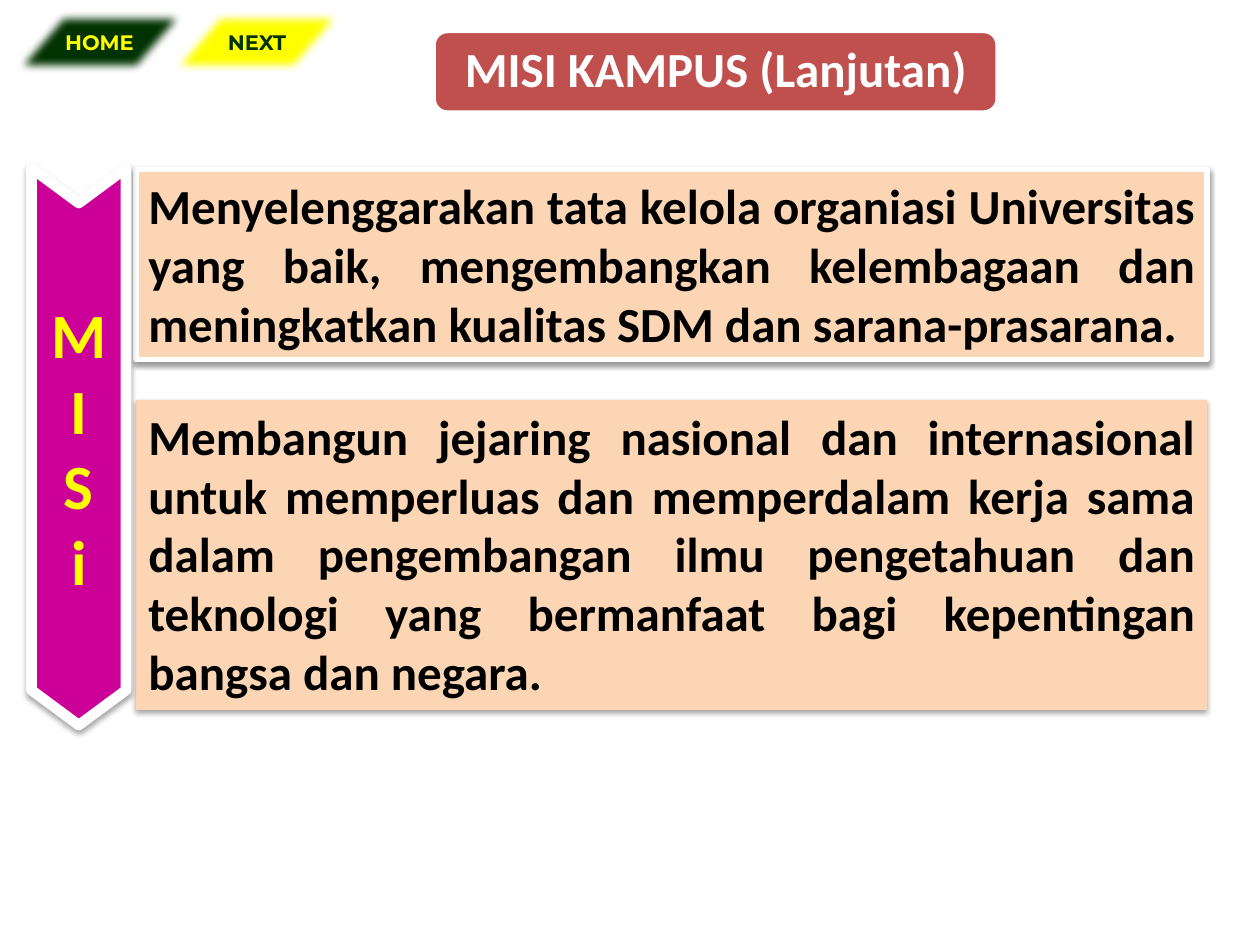
"""Build the mission slide: two buttons, a title, a vertical banner and two statements."""
from lxml import etree
from pptx import Presentation
from pptx.dml.color import RGBColor
from pptx.enum.shapes import MSO_SHAPE
from pptx.enum.text import MSO_ANCHOR, PP_ALIGN
from pptx.oxml.ns import qn
from pptx.util import Inches, Pt

PARALLELOGRAM = MSO_SHAPE.PARALLELOGRAM
RECTANGLE = MSO_SHAPE.RECTANGLE
ROUNDED = MSO_SHAPE.ROUNDED_RECTANGLE
CHEVRON = MSO_SHAPE.CHEVRON
CENTER, JUSTIFY = PP_ALIGN.CENTER, PP_ALIGN.JUSTIFY
TOP, MIDDLE = MSO_ANCHOR.TOP, MSO_ANCHOR.MIDDLE

presentation = Presentation()
presentation.slide_width, presentation.slide_height = Inches(10), Inches(7.5)
slide = presentation.slides.add_slide(presentation.slide_layouts[6])
column = presentation.slide_width / 100
row = presentation.slide_height / 75


def add_block(kind, left, top, width, height, fill, line=0, shadow=0, soft=0):
    """Add a filled shape placed in grid units, with an optional white line and effects."""
    shape = slide.shapes.add_shape(
        kind, int(left * column), int(top * row), int(width * column), int(height * row))
    shape.fill.solid()
    shape.fill.fore_color.rgb = RGBColor.from_string(fill)
    if line:
        shape.line.color.rgb = RGBColor.from_string("FFFFFF")
        shape.line.width = Pt(line)
    else:
        shape.line.fill.background()
    shape.shadow.inherit = False
    effects = shape._element.spPr.find(qn("a:effectLst"))
    if shadow:
        outer = etree.SubElement(
            effects, qn("a:outerShdw"), blurRad=str(Pt(3.1)), dist=str(Pt(1.7)),
            dir="5400000", rotWithShape="0")
        color = etree.SubElement(outer, qn("a:srgbClr"), val="000000")
        etree.SubElement(color, qn("a:alpha"), val=str(shadow * 1000))
    if soft:
        etree.SubElement(effects, qn("a:softEdge"), rad=str(Pt(soft)))
    return shape


def write(shape, text, size, color, font="Calibri", align=CENTER, anchor=MIDDLE,
          wrap=True, spacing=1.0):
    """Write bold text into a shape, one paragraph for each line."""
    frame = shape.text_frame
    frame.text = text
    frame.word_wrap = wrap
    frame.vertical_anchor = anchor
    for paragraph in frame.paragraphs:
        paragraph.alignment = align
        paragraph.line_spacing = spacing
        paragraph.font.size = Pt(size)
        paragraph.font.bold = True
        paragraph.font.name = font
        paragraph.font.color.rgb = RGBColor.from_string(color)


buttons = [("HOME", "003300", "FFFF00"), ("NEXT", "FFFF00", "003300")]
for index, (label, fill, color) in enumerate(buttons):
    button = add_block(PARALLELOGRAM, 12.5 * index, 0.85, 15.8, 5, fill, soft=5)
    button.adjustments[0] = 0.87
    write(button, label, 12, color, font="Montserrat", wrap=False)

statements = [
    (13.45, 15.1, 3, 38,
     "Menyelenggarakan tata kelola organiasi Universitas yang baik, mengembangkan "
     "kelembagaan dan meningkatkan kualitas SDM dan sarana-prasarana."),
    (31.75, 24.6, 0, 35,
     "Membangun jejaring nasional dan internasional untuk memperluas dan memperdalam "
     "kerja sama dalam pengembangan ilmu pengetahuan dan teknologi yang bermanfaat "
     "bagi kepentingan bangsa dan negara."),
]
for top, height, line, shadow, text in statements:
    statement = add_block(RECTANGLE, 10.8, top, 85, height, "FCD5B5", line, shadow)
    write(statement, text, 28, "000000", align=JUSTIFY, anchor=TOP)

banner = add_block(CHEVRON, -15.85, 31.7, 44.2, 7.5, "CC0099", line=6, shadow=35)
banner.adjustments[0] = 0.37
banner.rotation = 90
write(banner, "M\nI\nS\ni", 36, "FFFF00")
banner.text_frame._txBody.bodyPr.set("vert", "vert270")

title = add_block(ROUNDED, 34.45, 2.5, 44.7, 6.4, "C0504D", line=2)
write(title, "MISI KAMPUS (Lanjutan)", 28, "FFFFFF", spacing=0.9)

presentation.save("out.pptx")
